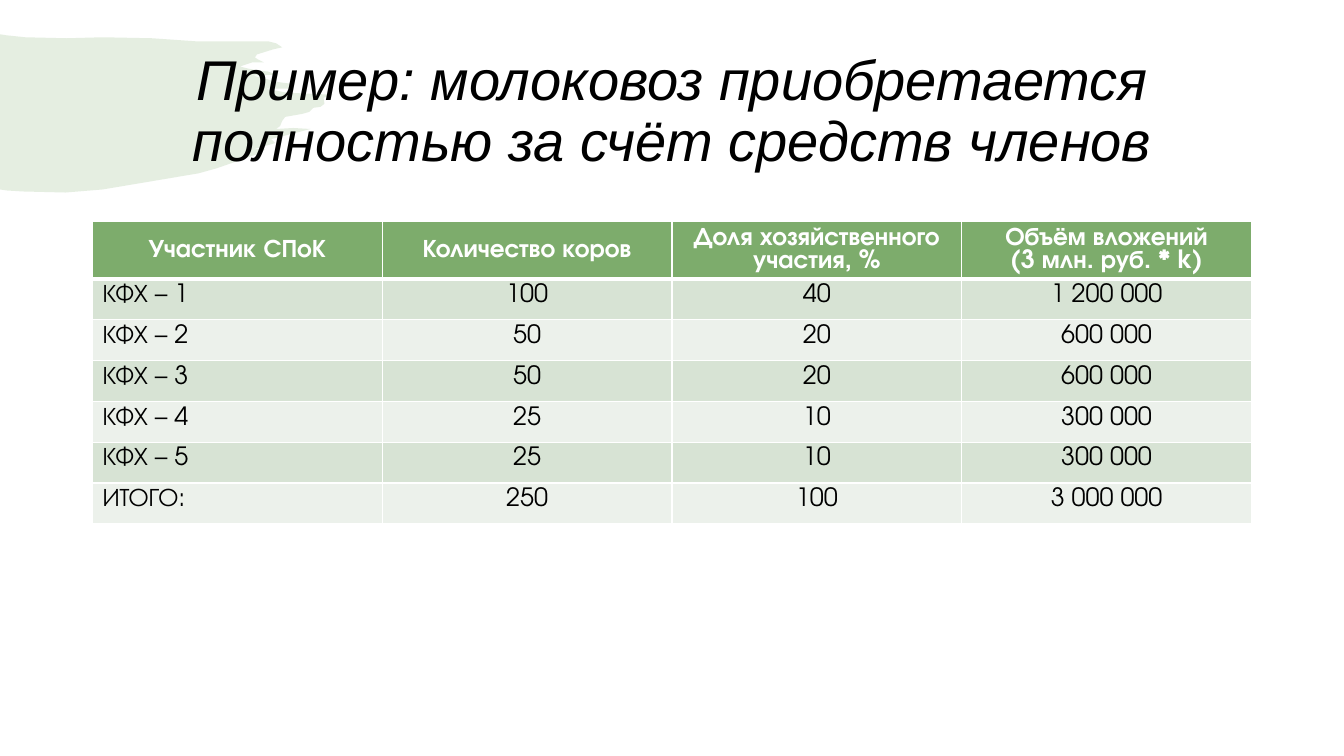
from lxml import etree
from pptx import Presentation
from pptx.dml.color import RGBColor
from pptx.enum.text import MSO_ANCHOR, MSO_AUTO_SIZE, PP_ALIGN
from pptx.oxml.ns import qn
from pptx.util import Cm, Pt

# Content
TITLE = "Пример: молоковоз приобретается полностью за счёт средств членов"
ROWS = [
    ("Участник СПоК", "Количество коров", "Доля хозяйственного участия, %",
     "Объём вложений\n(3 млн. руб. * k)"),
    ("КФХ – 1", "100", "40", "1 200 000"),
    ("КФХ – 2", "50", "20", "600 000"),
    ("КФХ – 3", "50", "20", "600 000"),
    ("КФХ – 4", "25", "10", "300 000"),
    ("КФХ – 5", "25", "10", "300 000"),
    ("ИТОГО:", "250", "100", "3 000 000"),
]
# Outline of the brush stroke, in hundredths of an inch
STROKE = [
    (0, 34), (6, 35), (25, 37), (66, 38), (102, 37), (151, 38), (194, 41),
    (248, 41), (266, 41), (274, 43), (280, 47), (271, 49), (255, 54),
    (253, 57), (256, 59), (262, 62), (250, 62), (238, 66), (246, 68),
    (256, 70), (266, 71), (275, 74), (251, 75), (263, 78), (273, 81),
    (280, 82), (288, 83), (290, 85), (287, 88), (284, 88), (263, 88),
    (285, 92), (330, 94), (321, 97), (322, 103), (318, 106), (311, 107),
    (307, 111), (300, 113), (283, 116), (280, 120), (278, 125), (274, 128),
    (291, 127), (308, 128), (289, 133), (269, 138), (273, 142), (252, 148),
    (263, 148), (255, 153), (215, 167), (197, 172), (102, 188), (65, 191),
    (23, 190), (7, 189), (0, 188),
]

GREEN = RGBColor(0x7D, 0xAC, 0x6C)
BANDS = (RGBColor(0xEC, 0xF1, 0xEB), RGBColor(0xD7, 0xE3, 0xD4))
WHITE = RGBColor(0xFF, 0xFF, 0xFF)
BLACK = RGBColor(0, 0, 0)
CENTER, LEFT = PP_ALIGN.CENTER, PP_ALIGN.LEFT
MIDDLE, TOP = MSO_ANCHOR.MIDDLE, MSO_ANCHOR.TOP
LEFT_EDGE, WIDTH = Cm(2.33), Cm(29.21)
ROW_HEIGHT = Cm(1.03)


def style_text(tf, font, size, color, align, bold=False, italic=False):
    for p in tf.paragraphs:
        p.alignment = align
        for r in p.runs:
            r.font.name, r.font.size = font, Pt(size)
            r.font.bold, r.font.italic = bold, italic
            r.font.color.rgb = color


def set_borders(cell, bottom):
    tcPr = cell._tc.get_or_add_tcPr()
    widths = (("a:lnL", 1), ("a:lnR", 1), ("a:lnT", 1), ("a:lnB", bottom))
    for i, (tag, width) in enumerate(widths):
        ln = etree.Element(qn(tag), w=str(Pt(width)))
        fill = etree.SubElement(ln, qn("a:solidFill"))
        etree.SubElement(fill, qn("a:srgbClr"), val=str(WHITE))
        tcPr.insert(i, ln)


prs = Presentation()
prs.slide_width, prs.slide_height = Cm(33.87), Cm(19.05)
s = prs.slides.add_slide(prs.slide_layouts[5])

# Brush stroke behind the title
builder = s.shapes.build_freeform(*STROKE[0], scale=Cm(2.54) / 100)
builder.add_line_segments(STROKE[1:], close=True)
sp = builder.convert_to_shape()
sp.shadow.inherit = False
sp.fill.solid()
sp.fill.fore_color.rgb = GREEN
sp.line.fill.background()
color = sp._element.spPr.find(".//" + qn("a:srgbClr"))
etree.SubElement(color, qn("a:alpha"), val="20000")
s.shapes._spTree.insert(2, sp._element)

# Title
title = s.shapes.title
title.left, title.top, title.width, title.height = LEFT_EDGE, Cm(1.01), WIDTH, Cm(3.68)
tf = title.text_frame
tf.text = TITLE
tf.word_wrap = True
tf.auto_size = MSO_AUTO_SIZE.NONE
tf.vertical_anchor = MIDDLE
tf.paragraphs[0].line_spacing = 0.9
style_text(tf, "Arial", 40, BLACK, CENTER, italic=True)

# Table
table = s.shapes.add_table(len(ROWS), len(ROWS[0]), LEFT_EDGE, Cm(5.59), WIDTH,
                           ROW_HEIGHT * len(ROWS)).table
for i, row in enumerate(ROWS):
    header = i == 0
    for j, text in enumerate(row):
        cell = table.cell(i, j)
        cell.text_frame.text = text
        cell.vertical_anchor = MIDDLE if header else TOP
        cell.fill.solid()
        cell.fill.fore_color.rgb = GREEN if header else BANDS[i % 2]
        style_text(cell.text_frame, "TeX Gyre Adventor", 18,
                   WHITE if header else BLACK,
                   CENTER if header or j else LEFT, bold=header)
        set_borders(cell, 3 if header else 1)

prs.save("out.pptx")
